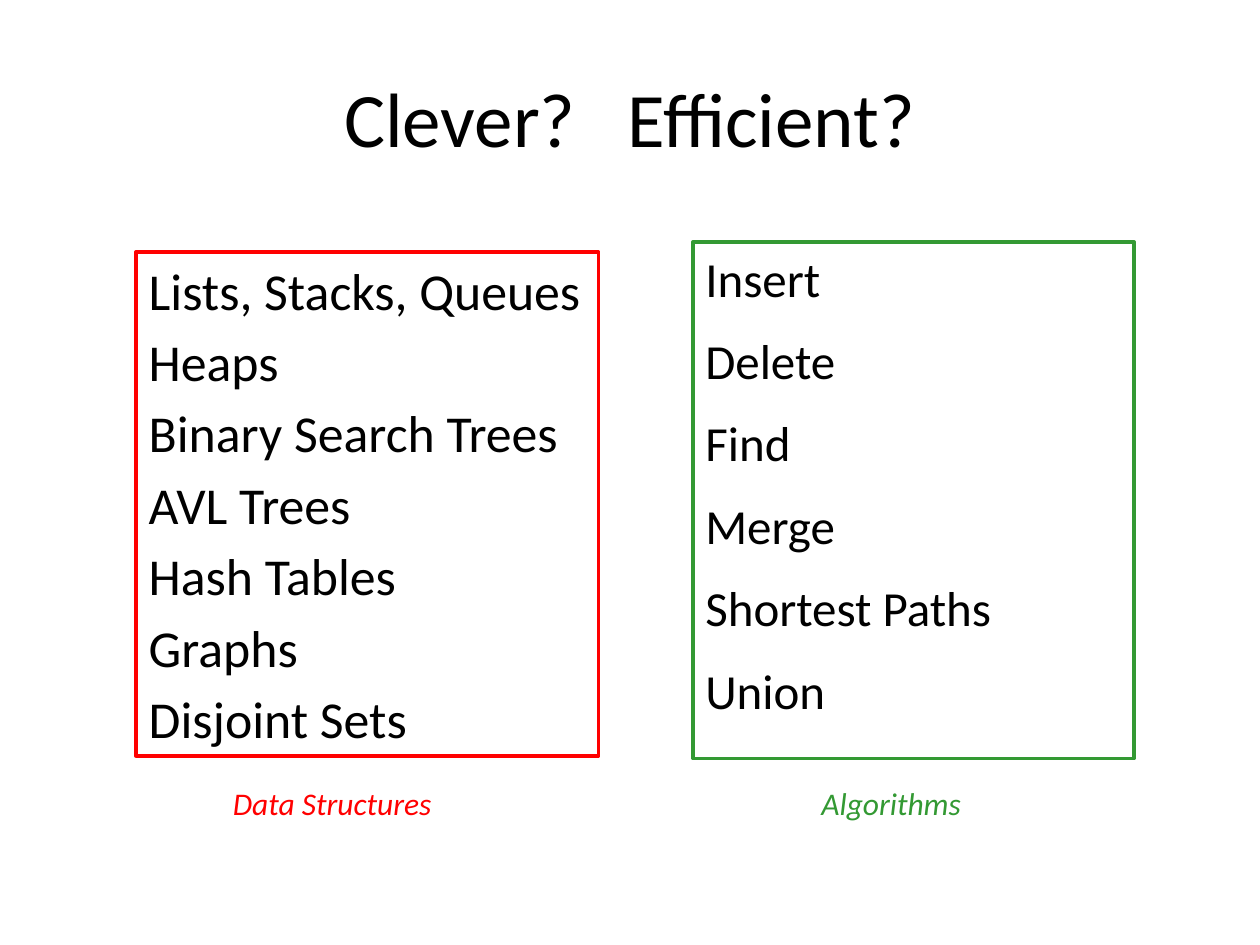
from pptx import Presentation
from pptx.dml.color import RGBColor as RGB
from pptx.enum.text import MSO_ANCHOR as Anchor, MSO_AUTO_SIZE as Fit, PP_ALIGN as Align
from pptx.util import Inches, Pt
from lxml import etree

BLACK = RGB(0, 0, 0)
RED = RGB(0xFF, 0, 0)
GREEN = RGB(0x33, 0x99, 0x33)
FONT = "Calibri"

DATA = ["Lists, Stacks, Queues", "Heaps", "Binary Search Trees", "AVL Trees",
        "Hash Tables", "Graphs", "Disjoint Sets"]
TASKS = ["Insert", "Delete", "Find", "Merge", "Shortest Paths", "Union"]


def place(shape, box):
    shape.left, shape.top, shape.width, shape.height = map(Inches, box)


def write(shape, lines, size, color=BLACK, gap=0, italic=False):
    frame = shape.text_frame
    frame.text = "\n".join(lines)
    for para in frame.paragraphs:
        para.space_before = Pt(gap)
        font = para.font
        font.name, font.size, font.italic = FONT, Pt(size), italic
        font.color.rgb = color


def head(shape, box, text):
    place(shape, box)
    write(shape, [text], 44)
    shape.text_frame.vertical_anchor = Anchor.MIDDLE
    shape.text_frame.paragraphs[0].alignment = Align.CENTER


def panel(shape, box, lines, size, gap, color):
    place(shape, box)
    write(shape, lines, size, gap=gap)
    shape.text_frame.word_wrap = True
    shape.text_frame.auto_size = Fit.NONE
    shape.line.color.rgb = color
    shape.line.width = Pt(2)


def unmark(shape, indent):
    for para in shape.text_frame.paragraphs:
        props = para._p.get_or_add_pPr()
        props.set("marL", str(Inches(indent)))
        props.set("indent", str(-Inches(indent)))
        tag = props.tag.replace("pPr", "buNone")
        props.append(etree.SubElement(props, tag))


def label(slide, box, text, color):
    shape = slide.shapes.add_textbox(*map(Inches, box))
    write(shape, [text], 18, color, italic=True)
    shape.text_frame.word_wrap = False


def main():
    deck = Presentation()
    deck.slide_width, deck.slide_height = Inches(10), Inches(7.5)
    slide = deck.slides.add_slide(deck.slide_layouts[1])
    head(slide.shapes.title, (0.5, 0.3, 9, 1.25), "Clever?   Efficient?")

    body = slide.placeholders[1]
    panel(body, (1.08, 2, 3.67, 4), DATA, 29.6, 5.3, RED)
    unmark(body, 0.38)

    side = slide.shapes.add_textbox(0, 0, 0, 0)
    panel(side, (5.5, 1.92, 3.5, 4.1), TASKS, 28, 13.5, GREEN)

    label(slide, (1.75, 6.17, 2.32, 0.5), "Data Structures", RED)
    label(slide, (6.42, 6.17, 1.68, 0.5), "Algorithms", GREEN)
    deck.save("out.pptx")


if __name__ == "__main__":
    main()
